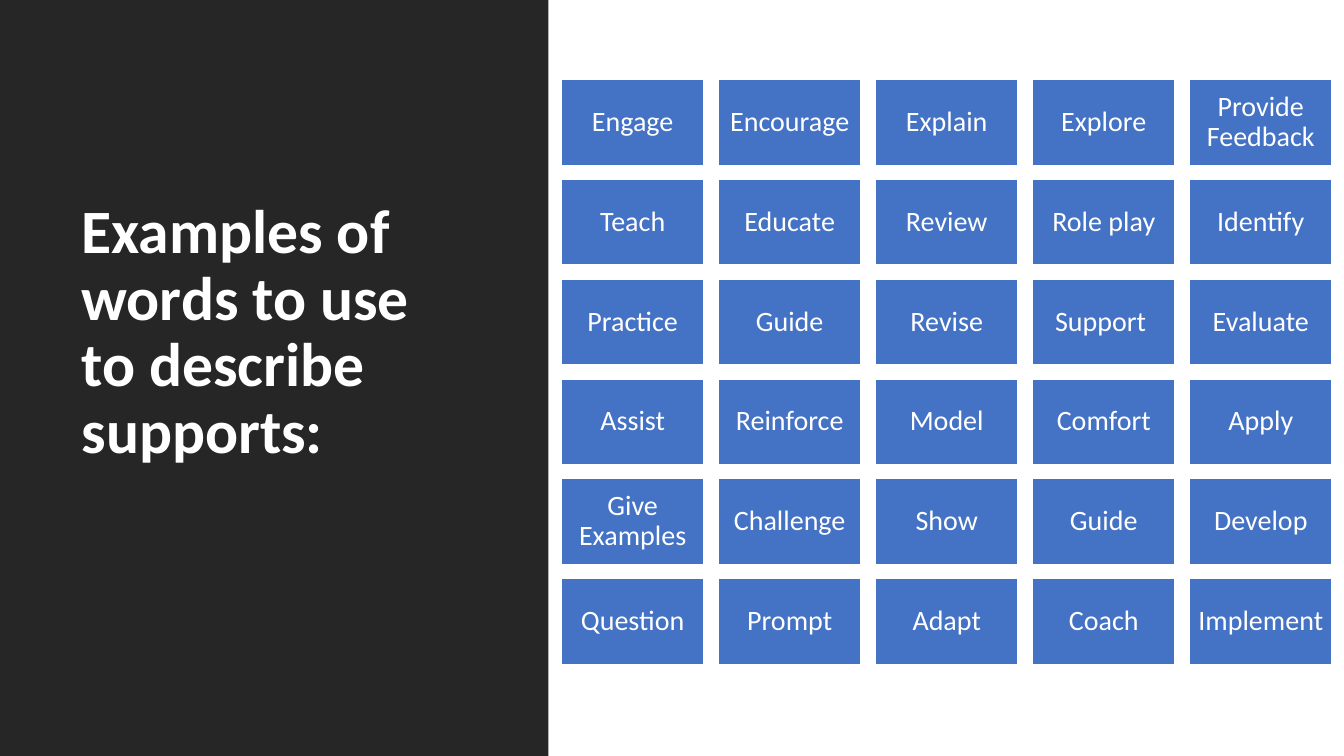
import pptx
import pptx.util
from pptx.dml.color import RGBColor
from pptx.enum.shapes import MSO_SHAPE
from pptx.enum.text import MSO_ANCHOR, PP_ALIGN

TITLE = "Examples of words to use to describe supports:"
WORDS = [
    ["Engage", "Encourage", "Explain", "Explore", "Provide Feedback"],
    ["Teach", "Educate", "Review", "Role play", "Identify"],
    ["Practice", "Guide", "Revise", "Support ", "Evaluate"],
    ["Assist", "Reinforce", "Model", "Comfort", "Apply"],
    ["Give Examples", "Challenge", "Show", "Guide", "Develop"],
    ["Question", "Prompt", "Adapt", "Coach", "Implement"],
]

THEME = {
    "panel": RGBColor.from_string("262626"),
    "tile": RGBColor.from_string("4472C4"),
    "light": RGBColor.from_string("FFFFFF"),
    "font": "Calibri",
    "title_size": pptx.util.Pt(44),
    "word_size": pptx.util.Pt(20),
    "spacing": 0.9,
}

SLIDE_W, SLIDE_H = 13.33, 7.5
PANEL_W = 5.44
TITLE_BOX = (0.71, 0.7, 3.69, 4.03)
GRID_LEFT, GRID_TOP = 5.57, 0.79
GRID_RIGHT, GRID_BOTTOM = 13.21, 6.59
TILE_W, TILE_H = 1.41, 0.85
STEP_X = (GRID_RIGHT - GRID_LEFT - TILE_W) / (len(WORDS[0]) - 1)
STEP_Y = (GRID_BOTTOM - GRID_TOP - TILE_H) / (len(WORDS) - 1)


def inches(box):
    return [pptx.util.Inches(v) for v in box]


def set_all(obj, values):
    for name, value in values.items():
        setattr(obj, name, value)


def write(sp, text, size, bold, align, anchor, inset):
    tf = sp.text_frame
    pad = pptx.util.Inches(inset)
    sides = ("left", "right", "top", "bottom")
    set_all(tf, {"word_wrap": True, "vertical_anchor": anchor})
    set_all(tf, {f"margin_{side}": pad for side in sides})
    p = tf.paragraphs[0]
    set_all(p, {"alignment": align, "line_spacing": THEME["spacing"]})
    r = p.add_run()
    r.text = text
    set_all(r.font, {"name": THEME["font"], "size": size, "bold": bold})
    r.font.color.rgb = THEME["light"]


def add_rect(s, box, colour):
    sp = s.shapes.add_shape(MSO_SHAPE.RECTANGLE, *inches(box))
    sp.shadow.inherit = False
    sp.fill.solid()
    sp.fill.fore_color.rgb = colour
    sp.line.fill.background()
    return sp


def add_tile(s, row, col, word):
    box = (GRID_LEFT + col * STEP_X, GRID_TOP + row * STEP_Y, TILE_W, TILE_H)
    sp = add_rect(s, box, THEME["tile"])
    sp.line.color.rgb = THEME["light"]
    sp.line.width = pptx.util.Pt(1)
    write(sp, word, THEME["word_size"], False,
          PP_ALIGN.CENTER, MSO_ANCHOR.MIDDLE, 0.08)


def main():
    prs = pptx.Presentation()
    prs.slide_width, prs.slide_height = inches((SLIDE_W, SLIDE_H))
    s = prs.slides.add_slide(prs.slide_layouts[6])

    add_rect(s, (0, 0, PANEL_W, SLIDE_H), THEME["panel"])
    title = s.shapes.add_textbox(*inches(TITLE_BOX))
    write(title, TITLE, THEME["title_size"], True,
          PP_ALIGN.LEFT, MSO_ANCHOR.BOTTOM, 0.1)

    for row, words in enumerate(WORDS):
        for col, word in enumerate(words):
            add_tile(s, row, col, word)

    prs.save("out.pptx")


if __name__ == "__main__":
    main()
